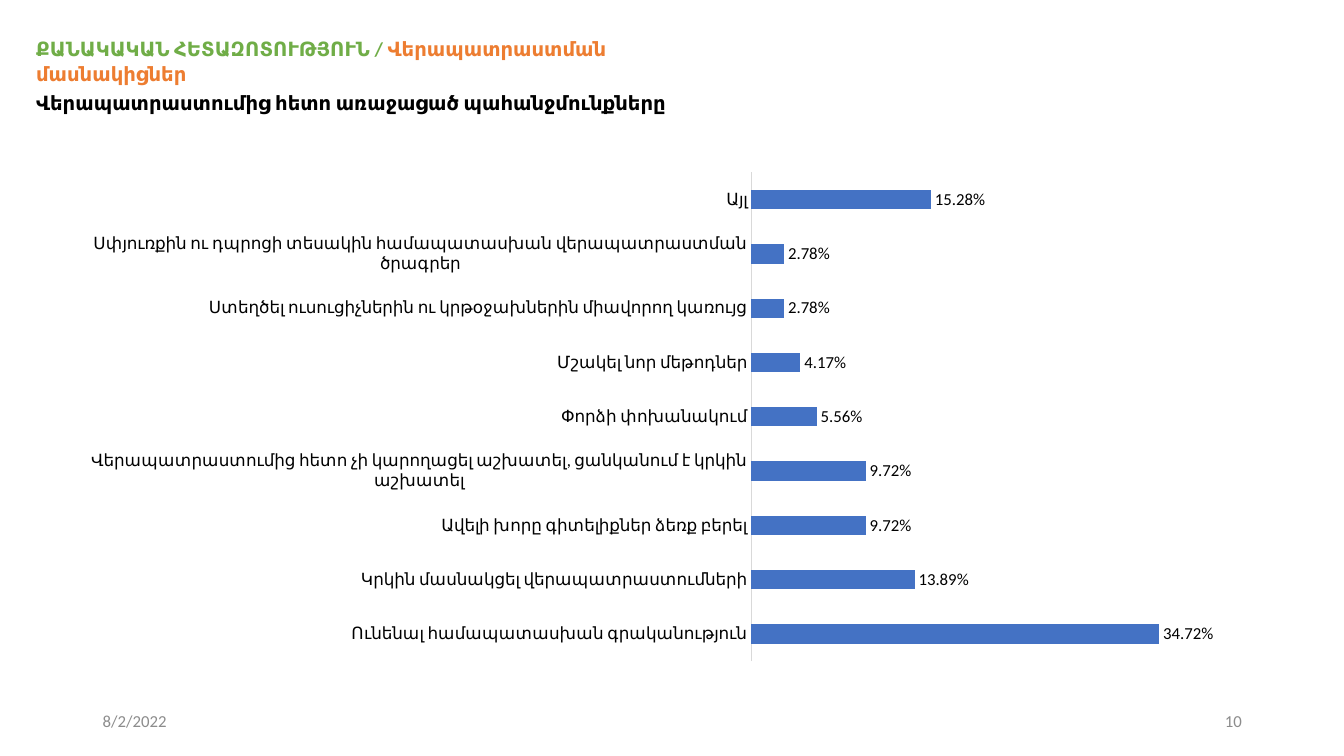
import pptx
import pptx.chart.data
import pptx.dml.color
import pptx.enum.chart
import pptx.enum.text
import pptx.util
from pptx.util import Cm, Pt

PP_ALIGN = pptx.enum.text.PP_ALIGN
ANCHOR = pptx.enum.text.MSO_ANCHOR
XL = pptx.enum.chart


def rgb(value):
    return pptx.dml.color.RGBColor.from_string(value)


def add_text(s, box, runs, size, bold=False, align=PP_ALIGN.LEFT, anchor=ANCHOR.TOP):
    tf = s.shapes.add_textbox(*[Cm(v) for v in box]).text_frame
    tf.word_wrap = True
    tf.vertical_anchor = anchor
    p = tf.paragraphs[0]
    p.alignment = align
    p.font.name = "Calibri"
    p.font.size = Pt(size)
    p.font.bold = bold
    for text, color in runs:
        r = p.add_run()
        r.text = text
        r.font.color.rgb = rgb(color)
    return tf


prs = pptx.Presentation()
prs.slide_width = Cm(33.87)
prs.slide_height = Cm(19.05)
s = prs.slides.add_slide(prs.slide_layouts[6])

headings = [
    ((0.66, 2.13, 24.82, 0.89), PP_ALIGN.JUSTIFY, 6,
     [("Վերապատրաստումից հետո առաջացած պահանջմունքները", "000000")]),
    ((0.66, 0.76, 18.69, 0.89), PP_ALIGN.LEFT, 8,
     [("ՔԱՆԱԿԱԿԱՆ ՀԵՏԱԶՈՏՈՒԹՅՈՒՆ / ", "70AD47"),
      ("Վերապատրաստման մասնակիցներ", "ED7D31")]),
]
for box, align, space_after, runs in headings:
    tf = add_text(s, box, runs, 14, True, align)
    tf.auto_size = pptx.enum.text.MSO_AUTO_SIZE.SHAPE_TO_FIT_TEXT
    tf.paragraphs[0].line_spacing = 1.07
    tf.paragraphs[0].space_after = Pt(space_after)

needs = [
    ("Ունենալ համապատասխան գրականություն", 0.3472),
    ("Կրկին մասնակցել վերապատրաստումների", 0.1389),
    ("Ավելի խորը գիտելիքներ ձեռք բերել", 0.0972),
    ("Վերապատրաստումից հետո չի կարողացել աշխատել, ցանկանում է կրկին աշխատել", 0.0972),
    ("Փորձի փոխանակում", 0.0556),
    ("Մշակել նոր մեթոդներ", 0.0417),
    ("Ստեղծել ուսուցիչներին ու կրթօջախներին միավորող կառույց", 0.0278),
    ("Սփյուռքին ու դպրոցի տեսակին համապատասխան վերապատրաստման ծրագրեր", 0.0278),
    ("Այլ", 0.1528),
]
data = pptx.chart.data.CategoryChartData(number_format="0.00%")
data.categories = [name for name, share in needs]
data.add_series("Series 1", [share for name, share in needs])
chart = s.shapes.add_chart(
    XL.XL_CHART_TYPE.BAR_CLUSTERED, Cm(1.7), Cm(4.09), Cm(29.67), Cm(12.83), data
).chart
chart.has_legend = False
chart.has_title = False
chart.font.name = "Calibri"
chart.font.size = Pt(10)
chart.font.color.rgb = rgb("000000")

cat_axis = chart.category_axis
cat_axis.major_tick_mark = XL.XL_TICK_MARK.NONE
cat_axis.has_major_gridlines = False
cat_axis.format.line.color.rgb = rgb("D9D9D9")
cat_axis.format.line.width = Pt(0.75)

val_axis = chart.value_axis
val_axis.visible = False
val_axis.has_major_gridlines = False
val_axis.minimum_scale = 0
val_axis.maximum_scale = 0.4

plot = chart.plots[0]
plot.vary_by_categories = False
plot.gap_width = 182
series = plot.series[0]
series.format.fill.solid()
series.format.fill.fore_color.rgb = rgb("4472C4")

labels = series.data_labels
labels.show_value = True
labels.number_format = "0.00%"
labels.number_format_is_linked = False
labels.position = XL.XL_LABEL_POSITION.OUTSIDE_END
for font in (cat_axis.tick_labels.font, labels.font):
    font.name = "Calibri"
    font.size = Pt(12)
    font.color.rgb = rgb("000000")

for left, text, align in [(2.34, "8/2/2022", PP_ALIGN.LEFT), (23.93, "10", PP_ALIGN.RIGHT)]:
    add_text(s, (left, 17.65, 7.62, 1.02), [(text, "8C8C8C")], 12,
             align=align, anchor=ANCHOR.MIDDLE)

prs.save("out.pptx")
